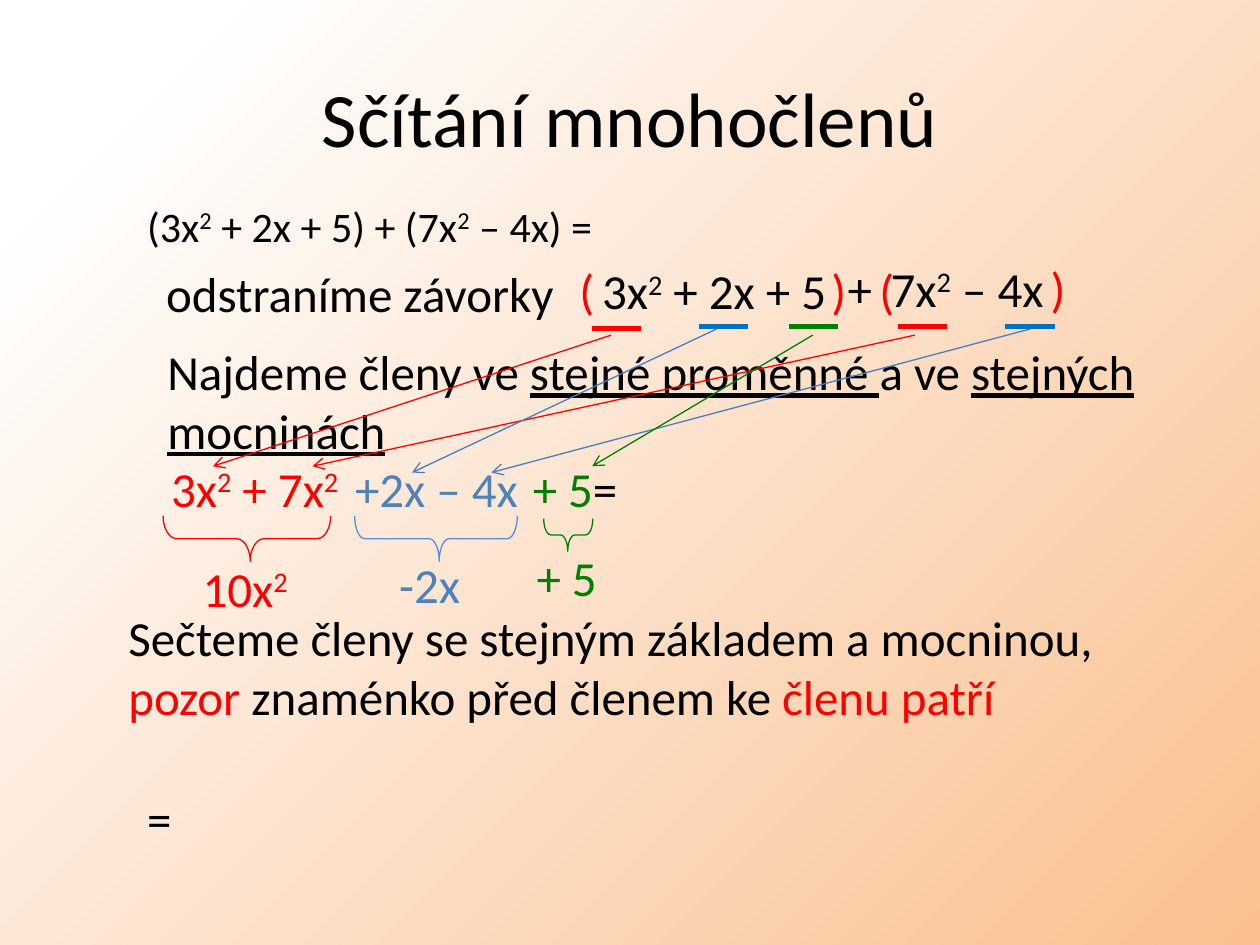
from pptx import Presentation, util as u
from pptx.dml.color import RGBColor
from pptx.enum import shapes, text
from pptx.oxml.ns import qn
from lxml import etree

THEME = dict(
    font="Calibri", head=44, body=28, small=24, bar=3, thin=0.75,
    black="000000", red="FF0000", green="008000", blue="4F81BD",
    deep="0070C0", brace="558ED5", arrow="4B7EBC",
    pale="FFFFFF", peach="FAC090",
)
COLS, ROWS = 100, 75
UNIT = u.Inches(10) // COLS

TITLE = "Sčítání mnohočlenů"
TASK = "(3x^2^ + 2x + 5) + (7x^2^ – 4x) ="
FIND = "Najdeme členy ve _stejné proměnné _a ve _stejných mocninách_"
ADD = [
    ("Sečteme členy se stejným základem a mocninou, ", "black"),
    ("pozor", "red"),
    (" znaménko před členem ke ", "black"),
    ("členu patří", "red"),
]

LINE, TERMS = 20.2, 35.9
LABELS = [
    ("odstraníme závorky", "black", 12.2, 20.4, 33.1),
    ("(", "red", 45, LINE, 3.2),
    ("3x^2^ + 2x + 5", "black", 46.8, LINE, 20.3),
    (")", "red", 65, LINE, 3.2),
    ("+", "black", 66.3, 20, 4),
    ("(", "red", 68.8, LINE, 3.2),
    ("7x^2^ – 4x", "black", 69.7, 20, 14.5),
    (")", "red", 82.4, 20, 3.2),
    ("3x^2^ + 7x^2^", "red", 12.6, TERMS, 16.4),
    ("+2x – 4x", "blue", 27.2, TERMS, 16),
    ("10x^2^", "red", 15.1, 43.8, 9),
    ("-2x", "blue", 30.7, 43.5, 7.8),
    ("+ 5", "green", 41.6, 43, 6.9),
    ("=", "black", 10.7, 62.1, 4),
]
BARS = [
    ("red", 47, 26.1), ("red", 71.3, 25.9), ("deep", 55.5, 25.9),
    ("deep", 79.8, 25.9), ("green", 62.6, 25.9),
]
ARROWS = [
    ("red", 48.5, 26.6, 16.9, 37), ("red", 72.6, 26.6, 24.8, 37),
    ("arrow", 56.9, 26.1, 32.7, 37.5), ("arrow", 81.8, 26.1, 39, 37.5),
    ("green", 64.5, 26.6, 47, 37),
]
BRACES = [
    ("red", 19.6, 42.75, 13.3, 3.6, 0.3, 0.52),
    ("brace", 34.6, 42.75, 12.9, 3.6, 0.22, 0.52),
    ("green", 45.1, 42.45, 3.9, 2.6, 0.22, 0.49),
]


def grid(*nums):
    return [int(n * UNIT) for n in nums]


def ink(name):
    return RGBColor.from_string(THEME[name])


def say(parts, x, y, w, h=5.7, hue="black", size="body", wrap=False,
        align=text.PP_ALIGN.LEFT, anchor=text.MSO_ANCHOR.TOP):
    frame = page.shapes.add_textbox(*grid(x, y, w, h)).text_frame
    frame.word_wrap = wrap
    frame.vertical_anchor = anchor
    para = frame.paragraphs[0]
    para.alignment = align
    for words, tint in [(parts, hue)] if isinstance(parts, str) else parts:
        for i, chunk in enumerate(words.split("_")):
            for j, bit in enumerate(chunk.split("^")):
                if not bit:
                    continue
                run = para.add_run()
                run.text = bit
                font = run.font
                font.name = THEME["font"]
                font.size = u.Pt(THEME[size])
                font.color.rgb = ink(tint)
                if i % 2:
                    font.underline = True
                if j % 2:
                    run._r.get_or_add_rPr().set("baseline", "30000")


def stroke(hue, x1, y1, x2, y2, width, tip=False):
    kind = shapes.MSO_CONNECTOR.STRAIGHT
    wire = page.shapes.add_connector(kind, *grid(x1, y1, x2, y2))
    wire.line.color.rgb = ink(hue)
    wire.line.width = u.Pt(THEME[width])
    if tip:
        etree.SubElement(wire.line._get_or_add_ln(), qn("a:tailEnd"), type="arrow")
    etree.SubElement(wire._element.spPr, qn("a:effectLst"))


def brace(hue, mid, row, span, deep, curl, peak):
    box = grid(mid - deep / 2, row - span / 2, deep, span)
    item = page.shapes.add_shape(shapes.MSO_SHAPE.LEFT_BRACE, *box)
    item.rotation = 270
    item.adjustments[0], item.adjustments[1] = curl, peak
    item.shadow.inherit = False
    item.fill.background()
    item.line.color.rgb = ink(hue)
    item.line.width = u.Pt(THEME["thin"])


deck = Presentation()
deck.slide_width, deck.slide_height = grid(COLS, ROWS)
page = deck.slides.add_slide(deck.slide_layouts[6])

fill = page.background.fill
fill.gradient()
fill.gradient_angle = 315
for stop, (spot, hue) in zip(fill.gradient_stops, [(0.1, "pale"), (1, "peach")]):
    stop.position = spot
    stop.color.rgb = ink(hue)

say(TITLE, 5, 3, 90, 12.5, size="head", wrap=True,
    align=text.PP_ALIGN.CENTER, anchor=text.MSO_ANCHOR.MIDDLE)
for hue, x, y in BARS:
    stroke(hue, x, y, x + 3.9, y, "bar")
say(TASK, 10.7, 15.4, 40.1, 5, size="small", wrap=True)
say(FIND, 12.3, 26.6, 78.9, 10.4, wrap=True)
say([("+ 5", "green"), ("=", "black")], 41.3, TERMS, 10.1, wrap=True)
say(ADD, 9.2, 47.7, 83.1, 10.4, wrap=True)
for item in BRACES:
    brace(*item)
for words, hue, x, y, w in LABELS:
    say(words, x, y, w, hue=hue)
for item in ARROWS:
    stroke(*item, "thin", tip=True)

deck.save("out.pptx")
